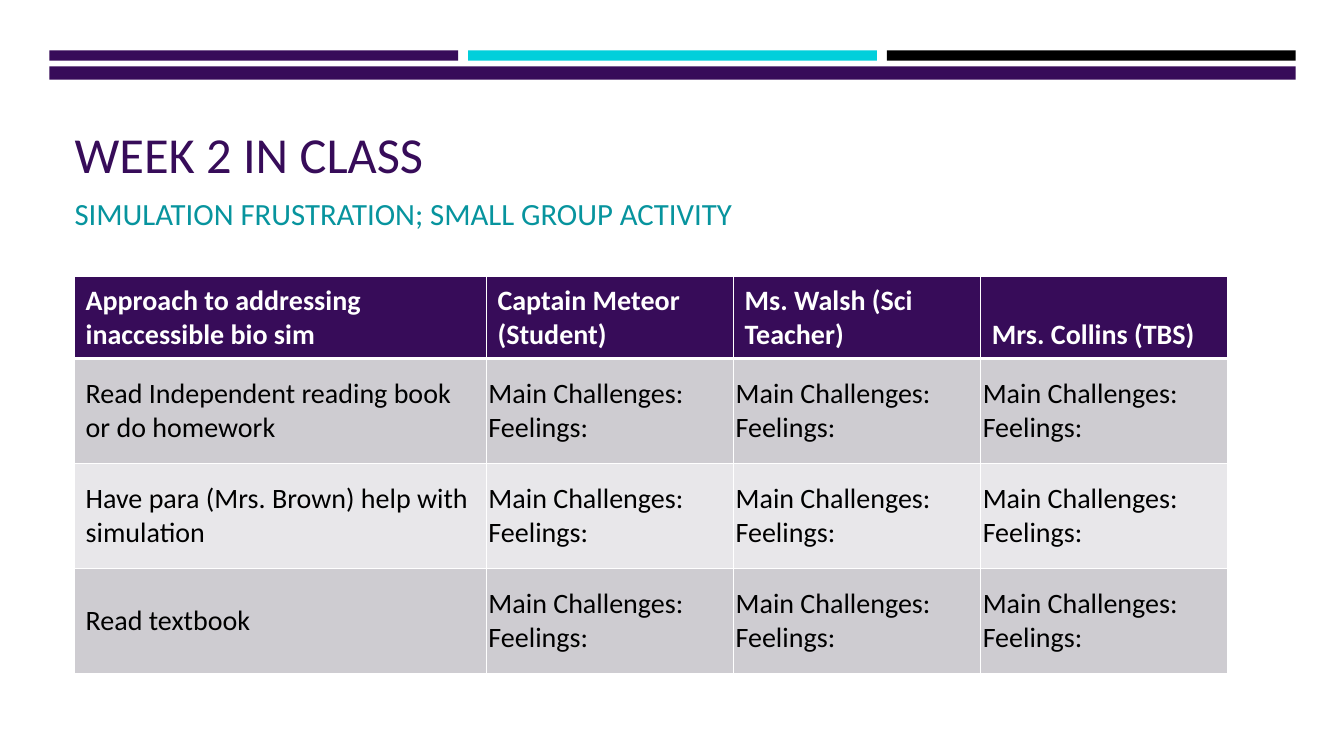
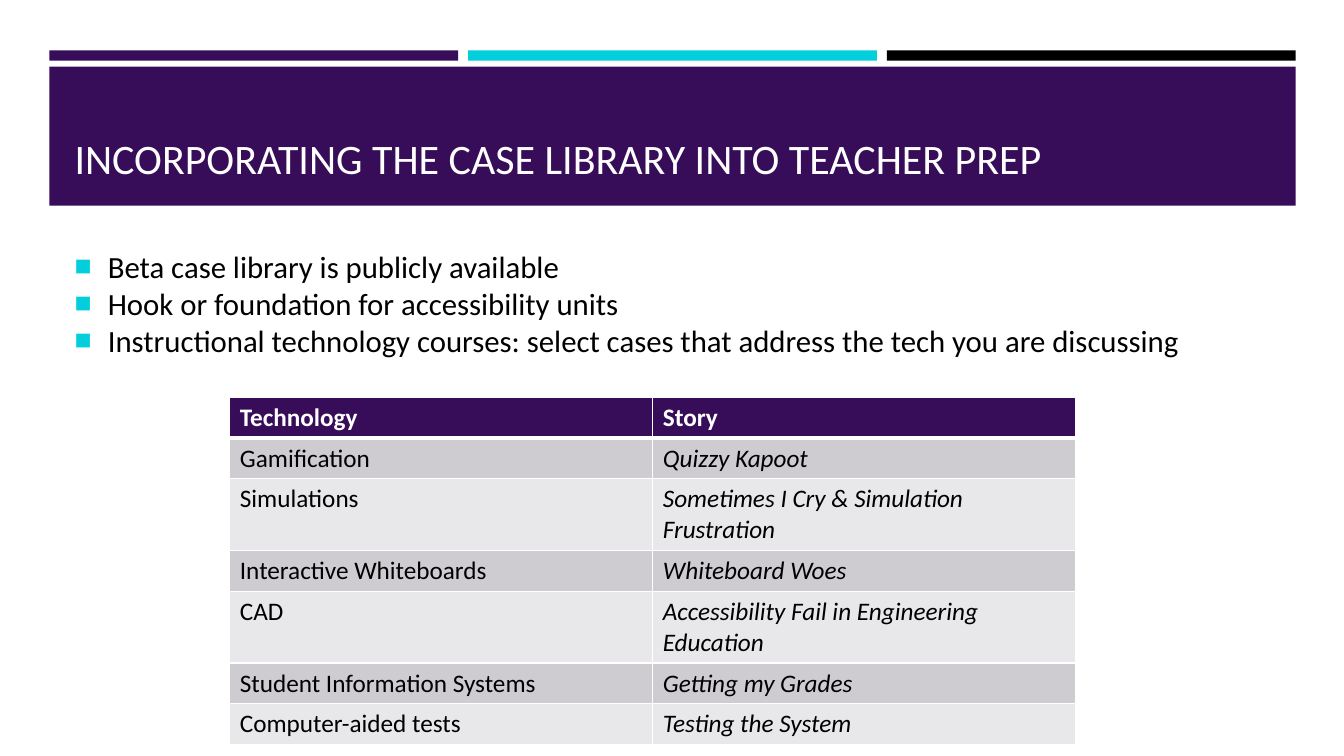
from typing import NamedTuple

from lxml.etree import SubElement as add_element
from pptx import Presentation
from pptx.dml.color import RGBColor
from pptx.enum.shapes import MSO_SHAPE as Shape
from pptx.enum.text import MSO_ANCHOR as Anchor, MSO_AUTO_SIZE as AutoSize, PP_ALIGN as Align
from pptx.oxml.ns import qn
from pptx.util import Inches, Pt

SLIDE_WIDTH, SLIDE_HEIGHT = Inches(13.33), Inches(7.5)
PURPLE, CYAN, TEAL = "370C59", "02CFDB", "07949E"
BLACK, WHITE = "000000", "FFFFFF"
STRIPES = ("CECCD1", "E8E7EA")
FONT = "Calibri"


class Box(NamedTuple):
    """Hold a region in percent of the slide's width and height."""
    left: float
    top: float
    width: float
    height: float

    def lengths(self):
        """Return the region as slide lengths."""
        sides = (SLIDE_WIDTH, SLIDE_HEIGHT) * 2
        return [round(share * side / 100) for share, side in zip(self, sides)]


class TableStyle(NamedTuple):
    """Hold what differs from one table to the next."""
    columns: tuple
    rows: tuple
    size: int
    label_insets: tuple = (0.1, 0.05)
    value_insets: tuple = (0.1, 0.05)
    header_anchor: Anchor = Anchor.TOP
    body_anchor: Anchor = Anchor.TOP
    italic_values: bool = False


BARS = Box(3.68, 6.67, 92.72, 1.35)
BAR_GAP = 0.75
THIN_BAND = Box(3.68, 8.8, 92.72, 1.73)
THICK_BAND = Box(3.68, 8.8, 92.72, 18.4)
TITLE = Box(4.8, 10.6, 90.4, 14.3)
SUBTITLE = Box(4.8, 25.07, 90.4, 7.6)
BULLETS = Box(4.8, 30.13, 90.4, 19.87)
ACTIVITY_TABLE = Box(5.55, 36.53, 85.82, 52.53)
STORY_TABLE = Box(17.1, 52.53, 62.95, 37.87)

ACTIVITY_STYLE = TableStyle(
    columns=(5, 3, 3, 3), rows=(11, 14, 14, 14), size=20,
    label_insets=(0.11, 0.06), value_insets=(0.02, 0.02),
    header_anchor=Anchor.BOTTOM, body_anchor=Anchor.MIDDLE)
STORY_STYLE = TableStyle(columns=(1, 1), rows=(1,) * 7, size=18, italic_values=True)

PROMPTS = "Main Challenges:\nFeelings:"
ACTIVITY_ROWS = [
    ["Approach to addressing inaccessible bio sim", "Captain Meteor (Student)",
     "Ms. Walsh (Sci Teacher)", "Mrs. Collins (TBS)"],
    *([approach] + [PROMPTS] * 3 for approach in (
        "Read Independent reading book or do homework",
        "Have para (Mrs. Brown) help with simulation",
        "Read textbook"))]
STORY_ROWS = [
    ("Technology", "Story"),
    ("Gamification", "Quizzy Kapoot"),
    ("Simulations", "Sometimes I Cry & Simulation Frustration"),
    ("Interactive Whiteboards", "Whiteboard Woes"),
    ("CAD", "Accessibility Fail in Engineering Education"),
    ("Student Information Systems", "Getting my Grades"),
    ("Computer-aided tests", "Testing the System")]


def set_values(target, **values):
    """Set each named attribute of the target."""
    for name, value in values.items():
        setattr(target, name, value)


def paint(color_holder, color):
    """Give a fill a solid colour from a hex string."""
    color_holder.solid()
    color_holder.fore_color.rgb = RGBColor.from_string(color)


def format_text(frame, size, color, **font_values):
    """Format all paragraphs of a text frame alike."""
    for paragraph in frame.paragraphs:
        set_values(paragraph, alignment=Align.LEFT, space_before=Pt(0), space_after=Pt(0))
        set_values(paragraph.font, name=FONT, size=Pt(size), **font_values)
        paint(paragraph.font.fill, color)


def set_bullet(paragraph, color=None):
    """Give a paragraph a square bullet, or none without a colour."""
    properties = paragraph._p.get_or_add_pPr()
    indent = Inches(0.33) if color else 0
    properties.set("marL", str(indent))
    properties.set("indent", str(-indent))
    if not color:
        add_element(properties, qn("a:buNone"))
        return
    bullet_color = add_element(properties, qn("a:buClr"))
    add_element(bullet_color, qn("a:srgbClr"), val=color)
    add_element(properties, qn("a:buSzPct"), val="92000")
    add_element(properties, qn("a:buChar"), char="■")


def fill_placeholder(placeholder, box, text, size, color, anchor, bullet=None):
    """Place a placeholder in its box and fill it with formatted text."""
    names = ("left", "top", "width", "height")
    set_values(placeholder, **dict(zip(names, box.lengths())))
    frame = placeholder.text_frame
    frame.text = text
    set_values(frame, word_wrap=True, auto_size=AutoSize.NONE, vertical_anchor=anchor)
    for paragraph in frame.paragraphs:
        set_bullet(paragraph, bullet)
    format_text(frame, size, color)


def add_bar(slide, box, color):
    """Add a plain rectangle behind the title."""
    bar = slide.shapes.add_shape(Shape.RECTANGLE, *box.lengths())
    bar.shadow.inherit = False
    paint(bar.fill, color)
    bar.line.fill.background()
    slide.shapes.title.element.addprevious(bar.element)


def add_themed_slide(presentation, band, title, size, color):
    """Add a slide with the three bars, a band and the title."""
    slide = presentation.slides.add_slide(presentation.slide_layouts[1])
    bar_width = (BARS.width - 2 * BAR_GAP) / 3
    for index, bar_color in enumerate((PURPLE, CYAN, BLACK)):
        left = BARS.left + index * (bar_width + BAR_GAP)
        add_bar(slide, BARS._replace(left=left, width=bar_width), bar_color)
    add_bar(slide, band, PURPLE)
    fill_placeholder(slide.shapes.title, TITLE, title, size, color, Anchor.BOTTOM)
    return slide


def set_borders(cell, row_index):
    """Draw white cell borders, thicker below the header row."""
    thick_side = {0: "lnB", 1: "lnT"}.get(row_index)
    for side in ("lnL", "lnR", "lnT", "lnB"):
        width = Pt(3 if side == thick_side else 1)
        line = add_element(cell._tc.get_or_add_tcPr(), qn(f"a:{side}"), w=str(width))
        line_fill = add_element(line, qn("a:solidFill"))
        add_element(line_fill, qn("a:srgbClr"), val=WHITE)


def fill_cell(cell, text, row_index, column_index, style):
    """Write and format one table cell."""
    header = row_index == 0
    is_value = column_index > 0 and not header
    side, end = map(Inches, style.value_insets if is_value else style.label_insets)
    cell.text = text
    set_values(cell, margin_left=side, margin_right=side, margin_top=end, margin_bottom=end,
               vertical_anchor=style.header_anchor if header else style.body_anchor)
    set_borders(cell, row_index)
    paint(cell.fill, PURPLE if header else STRIPES[(row_index - 1) % 2])
    format_text(cell.text_frame, style.size, WHITE if header else BLACK,
                bold=header, italic=is_value and style.italic_values)


def add_striped_table(slide, box, rows, style):
    """Add a table whose columns and rows share its box by weight."""
    left, top, width, height = box.lengths()
    table = slide.shapes.add_table(
        len(rows), len(rows[0]), left, top, width, height).table
    for column, weight in zip(table.columns, style.columns):
        column.width = round(width * weight / sum(style.columns))
    for row, weight in zip(table.rows, style.rows):
        row.height = round(height * weight / sum(style.rows))
    for row_index, texts in enumerate(rows):
        for column_index, text in enumerate(texts):
            fill_cell(table.cell(row_index, column_index), text,
                      row_index, column_index, style)


def add_activity_slide(presentation):
    """Add the slide with the small group activity."""
    slide = add_themed_slide(presentation, THIN_BAND, "WEEK 2 IN CLASS", 36, PURPLE)
    fill_placeholder(slide.placeholders[1], SUBTITLE,
                     "SIMULATION FRUSTRATION; SMALL GROUP ACTIVITY", 22, TEAL, Anchor.TOP)
    add_striped_table(slide, ACTIVITY_TABLE, ACTIVITY_ROWS, ACTIVITY_STYLE)


def add_library_slide(presentation):
    """Add the slide that matches technologies with stories."""
    slide = add_themed_slide(presentation, THICK_BAND,
                             "INCORPORATING THE CASE LIBRARY INTO TEACHER PREP", 30, WHITE)
    points = (
        "Beta case library is publicly available",
        "Hook or foundation for accessibility units",
        "Instructional technology courses: select cases that address the tech you are discussing")
    fill_placeholder(slide.placeholders[1], BULLETS, "\n".join(points), 22, BLACK,
                     Anchor.MIDDLE, bullet=CYAN)
    add_striped_table(slide, STORY_TABLE, STORY_ROWS, STORY_STYLE)


def main():
    """Build and save the presentation."""
    presentation = Presentation()
    set_values(presentation, slide_width=SLIDE_WIDTH, slide_height=SLIDE_HEIGHT)
    add_activity_slide(presentation)
    add_library_slide(presentation)
    presentation.save("out.pptx")


if __name__ == "__main__":
    main()
